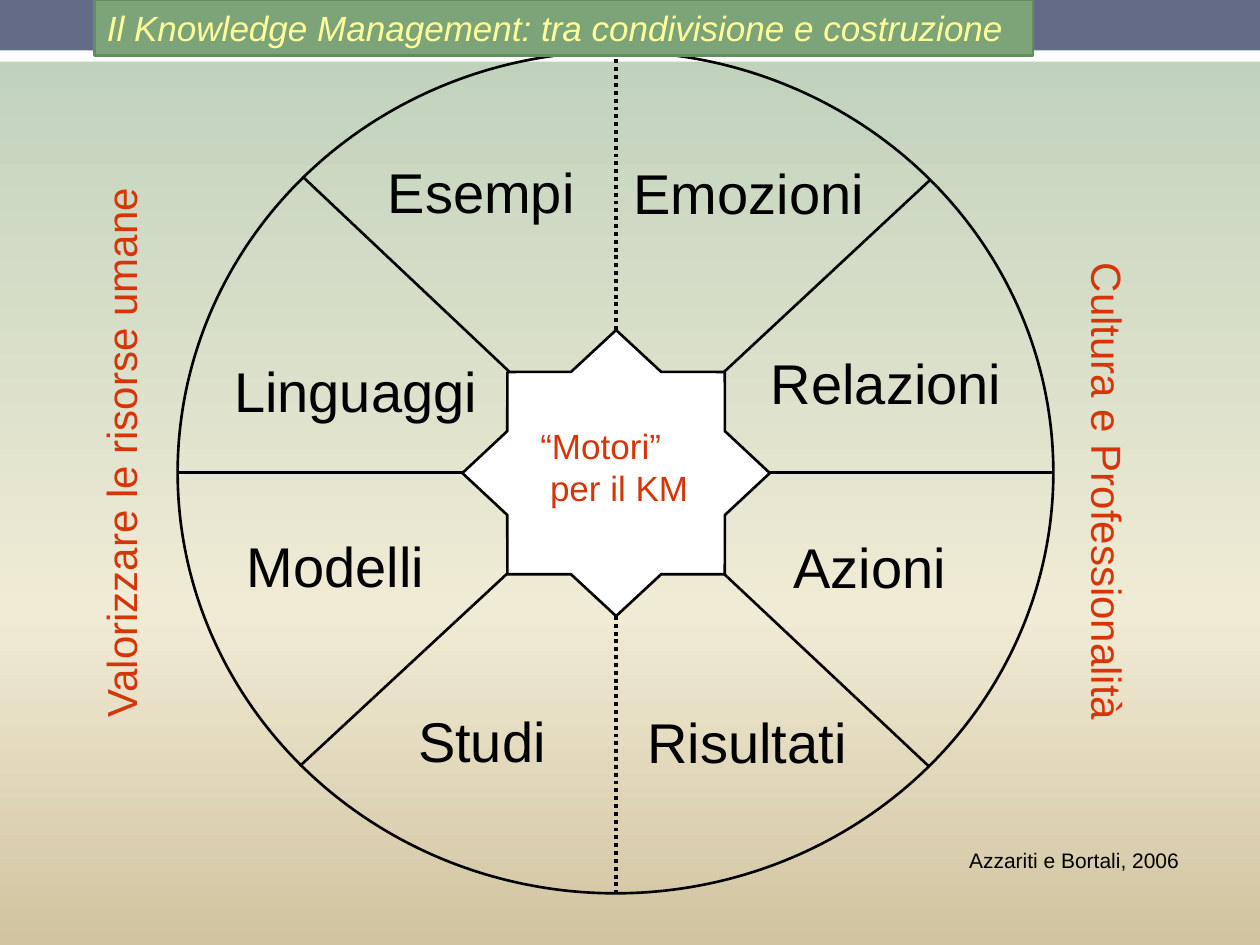
import copy

import pptx
import pptx.dml.color
import pptx.enum.dml
import pptx.enum.shapes
import pptx.enum.text
import pptx.oxml
import pptx.oxml.ns
import pptx.util

Inches = pptx.util.Inches
SHAPES = pptx.enum.shapes.MSO_SHAPE
ALIGN = pptx.enum.text.PP_ALIGN
ANCHOR = pptx.enum.text.MSO_ANCHOR
DASH = pptx.enum.dml.MSO_LINE

COLORS = {
    "sky": "BCD0BA", "cream": "F0EBD5", "sand": "D1C39F",
    "white": "FFFFFF", "black": "000000", "slate": "646B86",
    "green": "7DA379", "dark green": "648C61",
    "yellow": "FFFF99", "red": "D53509",
}


def rgb(name):
    return pptx.dml.color.RGBColor.from_string(COLORS[name])


class Wheel:
    """Holds the style and the slide being drawn."""

    font = "Arial"
    outline = 1.5

    def __init__(self, slide):
        self.slide = slide

    def background(self, start, middle, end, middle_at):
        fill = self.slide.background.fill
        fill.gradient()
        fill.gradient_angle = 270
        first = self.slide.element.xpath(".//p:bg//a:gs")[0]
        first.addnext(copy.deepcopy(first))
        stops = zip(fill.gradient_stops, (start, middle, end), (0, middle_at, 1))
        for stop, color, position in stops:
            stop.color.rgb = rgb(color)
            stop.position = position

    def shape(self, kind, box, fill=None, line=None):
        shape = self.slide.shapes.add_shape(kind, *map(Inches, box))
        shape.shadow.inherit = False
        if fill:
            shape.fill.solid()
            shape.fill.fore_color.rgb = rgb(fill)
        else:
            shape.fill.background()
        if line:
            shape.line.color.rgb = rgb(line)
            shape.line.width = pptx.util.Pt(self.outline)
        else:
            shape.line.fill.background()
        return shape

    def line(self, start, end, width=outline, dash=None):
        line = self.slide.shapes.add_connector(
            pptx.enum.shapes.MSO_CONNECTOR.STRAIGHT, *map(Inches, start + end))
        line.line.color.rgb = rgb("black")
        line.line.width = pptx.util.Pt(width)
        if dash:
            line.line.dash_style = dash
        properties = line.element.find(pptx.oxml.ns.qn("p:spPr"))
        properties.append(pptx.oxml.parse_xml(
            f'<a:effectLst {pptx.oxml.ns.nsdecls("a")}/>'))

    def set_text(self, shape, text, size, color="black", align=ALIGN.LEFT,
                 anchor=ANCHOR.TOP, wrap=True, italic=False):
        frame = shape.text_frame
        frame.text = text
        frame.word_wrap = wrap
        frame.vertical_anchor = anchor
        for paragraph in frame.paragraphs:
            paragraph.alignment = align
            for run in paragraph.runs:
                run.font.name = self.font
                run.font.size = pptx.util.Pt(size)
                run.font.italic = italic
                run.font.color.rgb = rgb(color)

    def label(self, text, box, size, rotation=0, **style):
        label = self.slide.shapes.add_textbox(*map(Inches, box))
        label.rotation = rotation
        self.set_text(label, text, size, **style)


def main():
    deck = pptx.Presentation()
    deck.slide_width, deck.slide_height = Inches(10), Inches(7.5)
    wheel = Wheel(deck.slides.add_slide(deck.slide_layouts[6]))

    # Background and top bands
    wheel.background("sky", "cream", "sand", 0.65)
    wheel.shape(SHAPES.RECTANGLE, (0, 0.24, 10, 0.25), "white")
    wheel.shape(SHAPES.RECTANGLE, (0, 0, 10, 0.4), "slate")

    # Source
    wheel.label("Azzariti e Bortali, 2006", (7.1, 6.58, 2.85, 0.5), 12,
                align=ALIGN.CENTER, anchor=ANCHOR.MIDDLE)

    # Wheel with its spokes
    left, top, width, height = rim = (1.41, 0.41, 6.95, 6.68)
    center_x, center_y = center = (4.89, 3.75)
    wheel.shape(SHAPES.OVAL, rim, line="black")
    wheel.line((center_x, top), (center_x, top + height), 2.25, DASH.ROUND_DOT)
    wheel.line((left, center_y), (left + width, center_y))
    for rim_point in ((7.38, 1.43), (7.37, 6.08), (2.38, 6.08), (2.4, 1.4)):
        wheel.line(center, rim_point)

    # Hub
    hub = wheel.shape(SHAPES.STAR_8_POINT, (3.67, 2.62, 2.44, 2.27),
                      "white", "black")
    hub.adjustments[0] = 0.383
    wheel.label("“Motori”\n per il KM", (4.19, 3.32, 1.46, 0.77), 20,
                color="red", wrap=False)

    # Sectors, clockwise from the top
    sectors = [
        ("Emozioni", 4.93, 1.21, 2.17), ("Relazioni", 6.02, 2.72, 2.17),
        ("Azioni", 6.2, 4.18, 1.42), ("Risultati", 5.04, 5.57, 1.8),
        ("Studi", 3.22, 5.56, 1.22), ("Modelli", 1.86, 4.17, 1.62),
        ("Linguaggi", 1.76, 2.78, 2.14), ("Esempi", 2.98, 1.2, 1.7),
    ]
    for sector, x, y, sector_width in sectors:
        wheel.label(sector, (x, y, sector_width, 0.64), 32, wrap=False)

    # Side captions
    captions = [
        ("Valorizzare le risorse umane", (-1.41, 3.51, 4.73, 0.5), 270),
        ("Cultura e Professionalità", (6.71, 3.48, 4.17, 0.5), 90),
    ]
    for caption, box, rotation in captions:
        wheel.label(caption, box, 24, rotation, color="red",
                    align=ALIGN.RIGHT, wrap=False)

    # Title
    title = wheel.shape(SHAPES.RECTANGLE, (0.75, 0, 7.45, 0.44),
                        "green", "dark green")
    wheel.set_text(title,
                   "Il Knowledge Management: tra condivisione e costruzione",
                   20, color="yellow", italic=True)

    deck.save("out.pptx")


if __name__ == "__main__":
    main()
